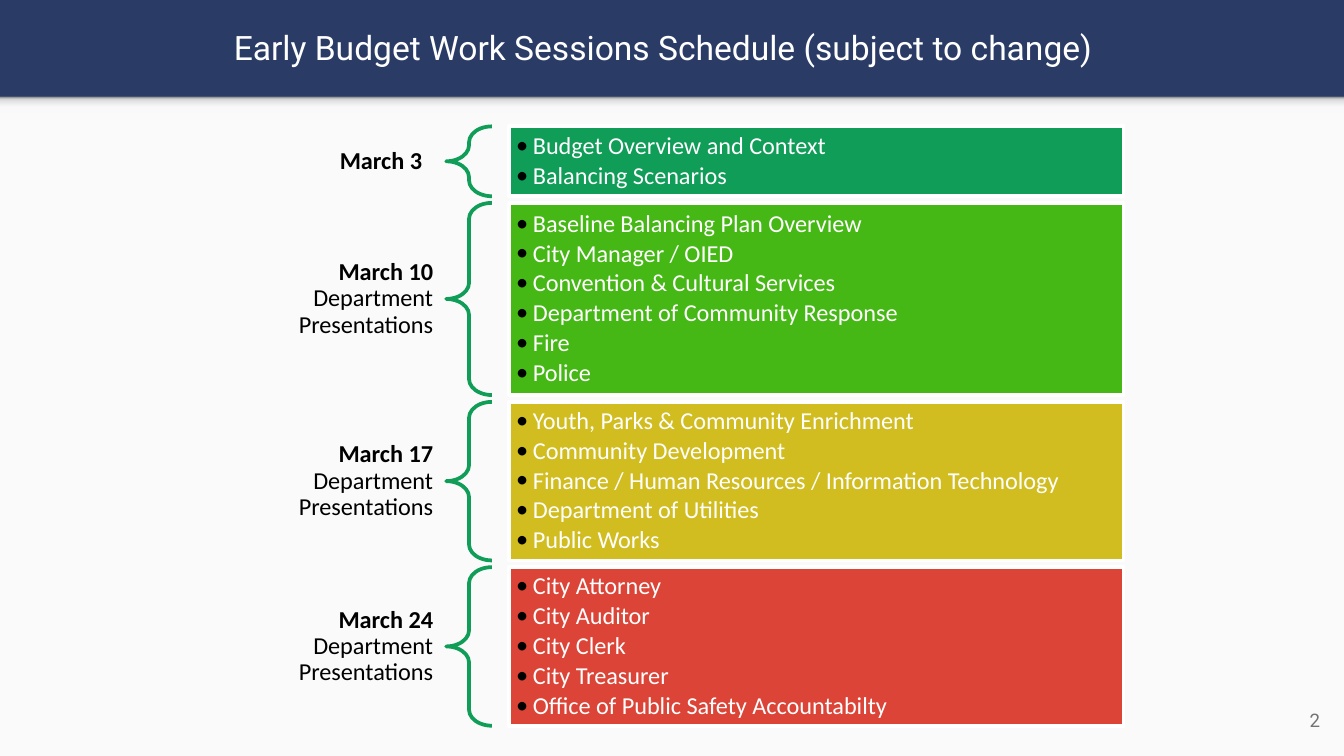
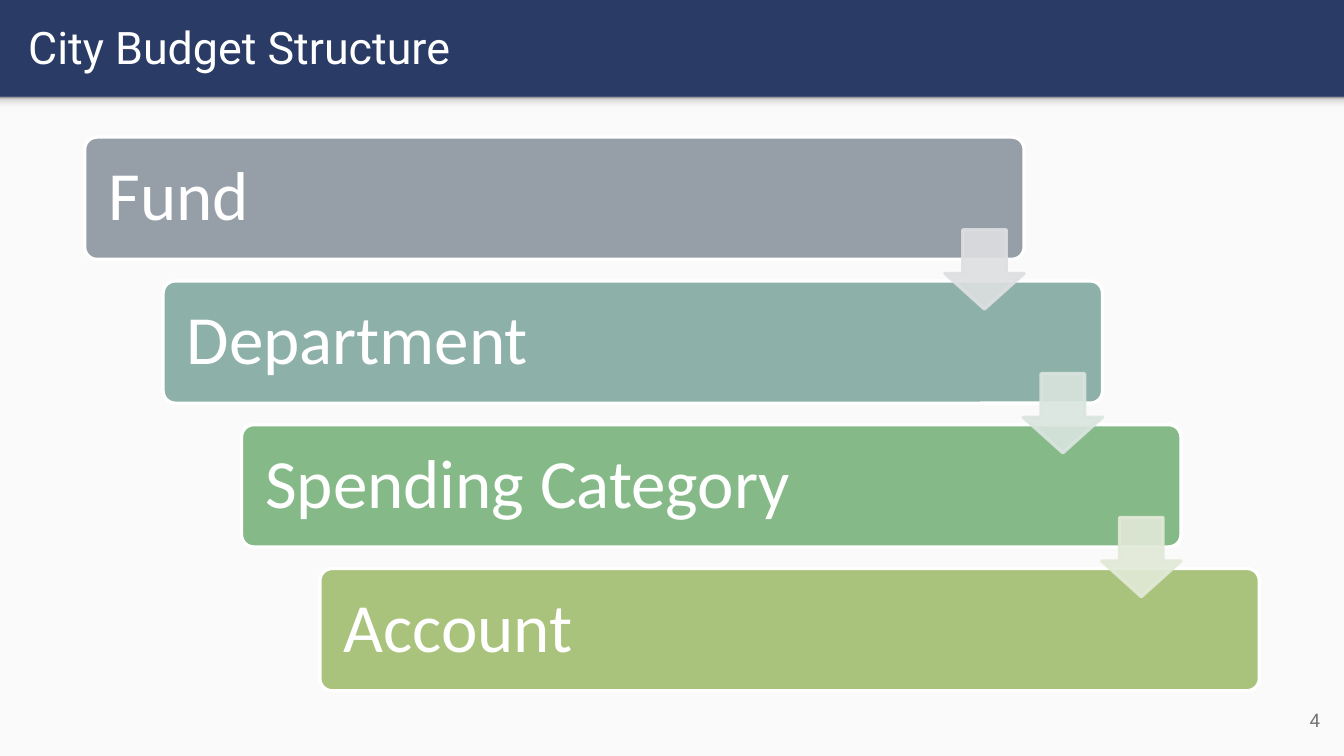
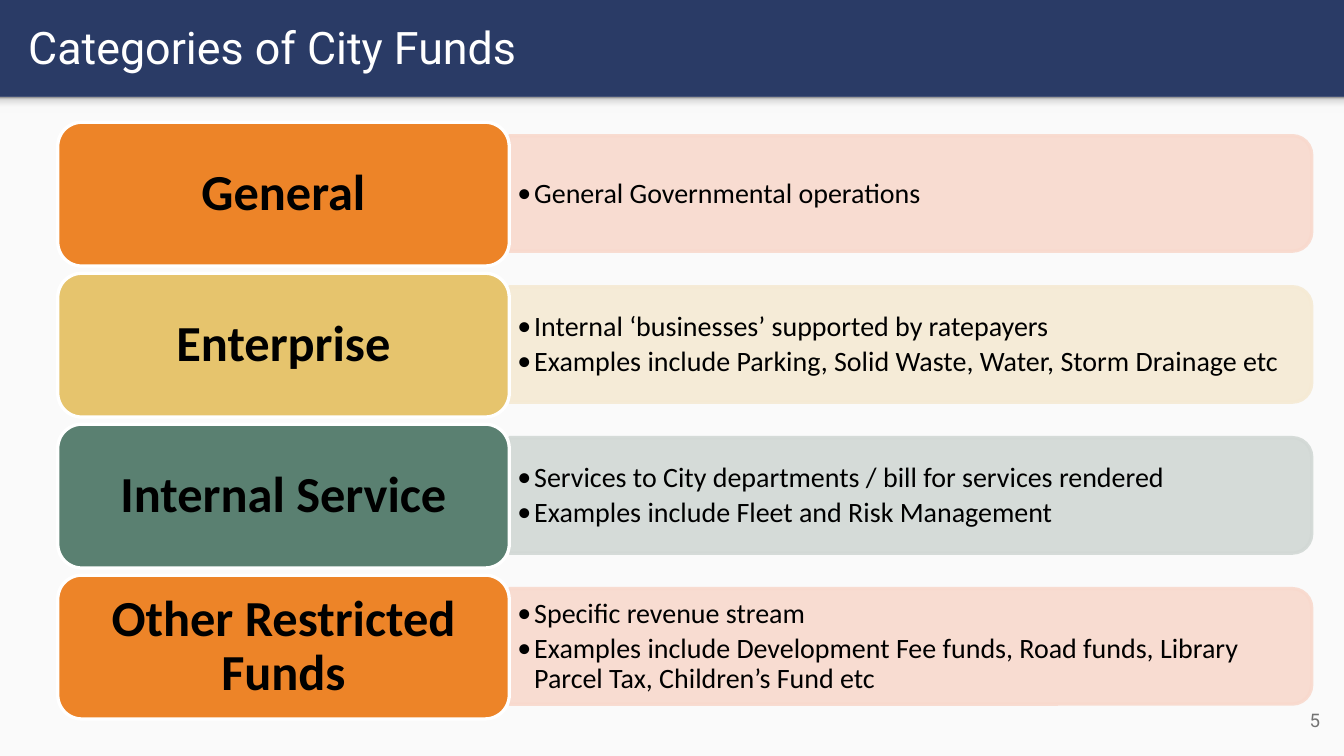
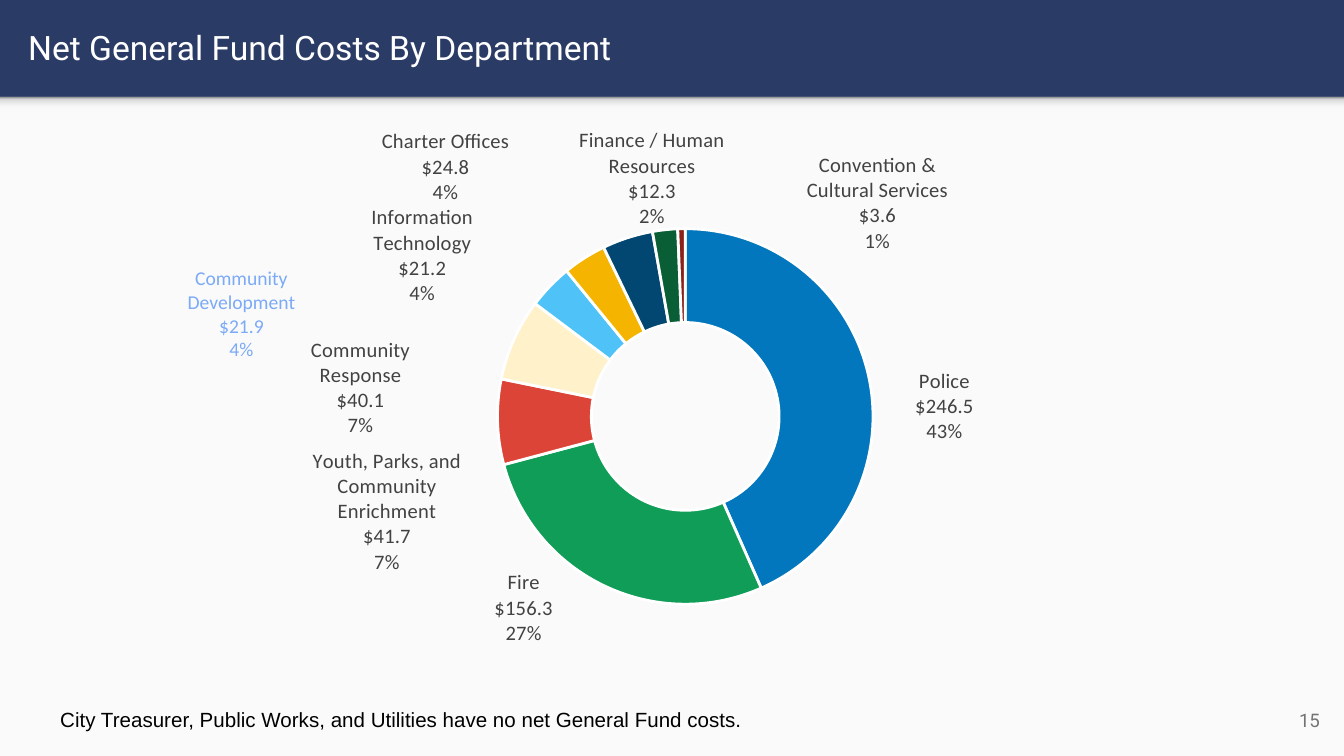
import math

import pptx
import pptx.chart.data
import pptx.dml.color
import pptx.enum.chart
import pptx.enum.shapes
import pptx.enum.text
import pptx.oxml
import pptx.oxml.ns
import pptx.util
from lxml import etree

Inches = pptx.util.Inches
Pt = pptx.util.Pt
SHAPES = pptx.enum.shapes.MSO_SHAPE
ALIGN = pptx.enum.text.PP_ALIGN
ANCHOR = pptx.enum.text.MSO_ANCHOR
qn = pptx.oxml.ns.qn

NAVY, PAPER, WHITE, BLACK = "2A3B66", "FAFAFA", "FFFFFF", "000000"
GREEN, RED, GREY, LABEL_GREY = "0F9D58", "DB4437", "737373", "424242"
HEADING_FONT, BODY_FONT, NOTE_FONT = "Roboto", "Calibri", "Arial"
SLIDE_WIDTH, BAND_HEIGHT = 10, 0.72
SLIDE_HEIGHT = SLIDE_WIDTH * 9 / 16
SHADE_STOPS = [(0, "F9F9F9"), (36, "F9F9F9"), (80, "DEDEDE"), (100, "999999")]
BULLET_INDENT = Inches(1 / 8)

SESSIONS = [
    ("March 3", "", 0.52, GREEN, ["Budget Overview and Context", "Balancing Scenarios"]),
    ("March 10 ", "Department Presentations", 1.43, "46B816",
     ["Baseline Balancing Plan Overview", "City Manager / OIED",
      "Convention & Cultural Services", "Department of Community Response",
      "Fire", "Police"]),
    ("March 17 ", "Department Presentations", 1.18, "D1BD1F",
     ["Youth, Parks & Community Enrichment", "Community Development",
      "Finance / Human Resources / Information Technology",
      "Department of Utilities", "Public Works"]),
    ("March 24 ", "Department Presentations", 1.18, RED,
     ["City Attorney", "City Auditor", "City Clerk", "City Treasurer",
      "Office of Public Safety Accountabilty"]),
]

# Level, box colour, colour of the arrow to the next level
BUDGET_LEVELS = [
    ("Fund", "969FA7", "DDDFE1"),
    ("Department", "8DB0A8", "DAE5DF"),
    ("Spending Category", "85BA88", "E2E9D7"),
    ("Account", "A9C37C", None),
]

FUNDS = [
    ("General", "ED8428", "F8D9CD", ["General Governmental operations"]),
    ("Enterprise", "E6C46D", "F5EAD4",
     ["Internal ‘businesses’ supported by ratepayers",
      "Examples include Parking, Solid Waste, Water, Storm Drainage etc"]),
    ("Internal Service", "5A8071", "D2D8D5",
     ["Services to City departments / bill for services rendered",
      "Examples include Fleet and Risk Management"]),
    ("Other Restricted Funds", "ED8428", "F8D9CD",
     ["Specific revenue stream",
      "Examples include Development Fee funds, Road funds, Library "
      "Parcel Tax, Children’s Fund etc"]),
]

# Department, cost, slice colour, centre of the label on the slide
COSTS = [
    ("Police", 246.5, "0277BD", (7.02, 3.02)),
    ("Fire", 156.3, GREEN, (3.9, 4.51)),
    ("Youth, Parks, and Community Enrichment", 41.7, RED, (2.89, 3.8)),
    ("Community Response", 40.1, "FFF1CA", (2.69, 2.88)),
    ("Community Development", 21.9, "4FC3F7", (1.8, 2.34)),
    ("Information Technology", 21.2, "F4B400", (3.15, 1.9)),
    ("Charter Offices", 24.8, "014771", (3.32, 1.24)),
    ("Finance / Human Resources", 12.3, "095E35", (4.85, 1.33)),
    ("Convention & Cultural Services", 3.6, "8B2219", (6.53, 1.51)),
]
CHART_BOX = (0.15, 0.88, 9.61, 4.11)
RING_CENTRE, RING_MIDDLE_RADIUS = (5.1, 3.09), 1.04


def rgb(colour):
    return pptx.dml.color.RGBColor.from_string(colour)


def format_font(font, size, colour, name=BODY_FONT, bold=False):
    font.size, font.name, font.bold = Pt(size), name, bold
    font.color.rgb = rgb(colour)


def format_frame(frame, inset=(0.1, 0.1), anchor=ANCHOR.MIDDLE):
    """Set wrapping, anchor and the (horizontal, vertical) insets."""
    frame.word_wrap = True
    frame.auto_size = pptx.enum.text.MSO_AUTO_SIZE.NONE
    frame.vertical_anchor = anchor
    frame.margin_left = frame.margin_right = Inches(inset[0])
    frame.margin_top = frame.margin_bottom = Inches(inset[1])


def write_line(frame, text, size, colour, name=BODY_FONT, bold=False,
               align=ALIGN.LEFT, spacing=None):
    frame.text = text
    paragraph = frame.paragraphs[0]
    paragraph.alignment, paragraph.line_spacing = align, spacing
    format_font(paragraph.runs[0].font, size, colour, name, bold)
    return paragraph


def write_bullets(frame, items, size, colour):
    frame.text = "\n".join(items)
    for paragraph in frame.paragraphs:
        properties = paragraph._p.get_or_add_pPr()
        properties.set("marL", str(BULLET_INDENT))
        properties.set("indent", str(-BULLET_INDENT))
        bullet_colour = etree.SubElement(properties, qn("a:buClr"))
        etree.SubElement(bullet_colour, qn("a:srgbClr"), val=BLACK)
        etree.SubElement(properties, qn("a:buFont"), typeface=BODY_FONT)
        etree.SubElement(properties, qn("a:buChar"), char="•")
        paragraph.alignment = ALIGN.LEFT
        paragraph.line_spacing = 0.9
        paragraph.space_after = Pt(0.15 * size)
        format_font(paragraph.runs[0].font, size, colour)


def add_text_box(slide, box, inset=(0.1, 0.1), anchor=ANCHOR.MIDDLE):
    frame = slide.shapes.add_textbox(*map(Inches, box)).text_frame
    format_frame(frame, inset, anchor)
    return frame


def add_shape(slide, kind, box, fill=None, line=None, width=1.75, opacity=None,
              adjustments=()):
    shape = slide.shapes.add_shape(kind, *map(Inches, box))
    shape.shadow.inherit = False
    if fill:
        shape.fill.solid()
        shape.fill.fore_color.rgb = rgb(fill)
    else:
        shape.fill.background()
    if line:
        shape.line.color.rgb = rgb(line)
        shape.line.width = Pt(width)
    else:
        shape.line.fill.background()
    for index, value in enumerate(adjustments):
        shape.adjustments[index] = value
    if opacity:
        for colour in shape._element.spPr.iter(qn("a:srgbClr")):
            etree.SubElement(colour, qn("a:alpha"), val=str(opacity * 1000))
    return shape


def shade_upwards(shape, stops):
    shape.fill.gradient()
    shape.fill.gradient_angle = 90
    stop_list = shape._element.spPr.find(".//" + qn("a:gsLst"))
    for stop in list(stop_list):
        stop_list.remove(stop)
    for position, colour in stops:
        stop = etree.SubElement(stop_list, qn("a:gs"), pos=str(position * 1000))
        etree.SubElement(stop, qn("a:srgbClr"), val=colour)


def add_titled_slide(presentation, title, number, size=24, align=ALIGN.LEFT):
    slide = presentation.slides.add_slide(presentation.slide_layouts[5])
    add_shape(slide, SHAPES.RECTANGLE,
              (0, BAND_HEIGHT, SLIDE_WIDTH, SLIDE_HEIGHT - BAND_HEIGHT), PAPER)
    shade = add_shape(slide, SHAPES.RECTANGLE, (0, BAND_HEIGHT, SLIDE_WIDTH, 0.12))
    shade_upwards(shade, SHADE_STOPS)
    heading = slide.shapes.title
    heading.left, heading.top = Inches(0.11), Inches(0.02)
    heading.width, heading.height = Inches(9.65), Inches(0.66)
    format_frame(heading.text_frame)
    write_line(heading.text_frame, title, size, WHITE, HEADING_FONT, align=align)
    write_line(add_text_box(slide, (9.32, 5.14, 0.6, 0.43)), str(number), 10, GREY,
               HEADING_FONT, align=ALIGN.RIGHT)
    return slide


def add_schedule(slide):
    top = 0.94
    for date, subject, height, colour, topics in SESSIONS:
        frame = add_text_box(slide, (1.64, top, 1.68, height), (0.1, 0.04))
        paragraph = write_line(frame, date, 13, BLACK, bold=True,
                               align=ALIGN.RIGHT, spacing=0.9)
        if subject:
            run = paragraph.add_run()
            run.text = subject
            format_font(run.font, 13, BLACK)
        else:
            frame.margin_right = Inches(0.18)
        add_shape(slide, SHAPES.LEFT_BRACE, (3.32, top, 0.34, height),
                  line=GREEN, width=2, adjustments=(0.35, 0.5))
        block = add_shape(slide, SHAPES.RECTANGLE, (3.79, top, 4.57, height),
                          colour, WHITE, 2)
        format_frame(block.text_frame, (0.05, 0.05))
        write_bullets(block.text_frame, topics, 13, WHITE)
        top += height + 0.05


def add_staircase(slide):
    corners = [(0.63 + 1.75 / 3 * step, 1.02 + 1.07 * step)
               for step in range(len(BUDGET_LEVELS))]
    for (left, top), (level, colour, _) in zip(corners, BUDGET_LEVELS):
        box = add_shape(slide, SHAPES.ROUNDED_RECTANGLE, (left, top, 6.99, 0.91),
                        colour, WHITE, adjustments=(0.1,))
        format_frame(box.text_frame, (0.15, 0.15))
        write_line(box.text_frame, level, 37, WHITE, spacing=0.9)
    for (left, top), (_, _, colour) in zip(corners, BUDGET_LEVELS):
        if colour:
            add_shape(slide, SHAPES.DOWN_ARROW, (left + 6.4, top + 0.69, 0.59, 0.59),
                      colour, colour, opacity=90, adjustments=(0.55, 0.45))


def add_fund_rows(slide):
    panel_left, panel_width, panel_height = 3.79, 5.97, 0.86
    for row, (fund, colour, tint, notes) in enumerate(FUNDS):
        top = 0.91 + 3.37 / 3 * row
        middle = top + 0.53
        # A quarter turn puts the two rounded corners on the right
        panel = add_shape(
            slide, SHAPES.ROUND_2_SAME_RECTANGLE,
            (panel_left + (panel_width - panel_height) / 2, middle - panel_width / 2,
             panel_height, panel_width), tint, tint, opacity=90)
        panel.rotation = 90
        frame = add_text_box(slide, (panel_left, top + 0.15, 5.93, 0.77), (0.06, 0.03))
        write_bullets(frame, notes, 15, BLACK)
        card = add_shape(slide, SHAPES.ROUNDED_RECTANGLE, (0.43, top, 3.36, 1.07),
                         colour, WHITE)
        format_frame(card.text_frame, (0.11, 0.06))
        write_line(card.text_frame, fund, 27, BLACK, bold=True, align=ALIGN.CENTER,
                   spacing=0.9)


def manual_layout(**values):
    """Return a c:layout element holding the given settings in order."""
    layout = pptx.oxml.parse_xml(
        "<c:layout %s><c:manualLayout/></c:layout>" % pptx.oxml.ns.nsdecls("c"))
    for name, value in values.items():
        etree.SubElement(layout[0], qn("c:" + name), val=str(value))
    return layout


def place_label(label, offset):
    """Show name, value and percentage, moved from the middle of the slice."""
    for name in ("c:showCatName", "c:showPercent"):
        label.find(qn(name)).set("val", "1")
    label.find(qn("c:idx")).addnext(manual_layout(x=offset[0], y=offset[1]))
    separator = etree.Element(qn("c:separator"))
    separator.text = "\n"
    label.find(qn("c:showBubbleSize")).addnext(separator)


def hide_leader_lines(labels):
    for leader in labels.findall(qn("c:showLeaderLines")):
        labels.remove(leader)
    etree.SubElement(labels, qn("c:showLeaderLines"), val="0")


def add_cost_chart(slide):
    data = pptx.chart.data.CategoryChartData(number_format='"$"#,##0.0')
    data.categories = [department for department, *_ in COSTS]
    data.add_series("Series 1", [cost for _, cost, *_ in COSTS])
    chart = slide.shapes.add_chart(pptx.enum.chart.XL_CHART_TYPE.DOUGHNUT,
                                   *map(Inches, CHART_BOX), data).chart
    chart.has_legend = chart.has_title = False
    format_font(chart.font, 10, "4285F4")
    plot_area = chart._chartSpace.find(".//" + qn("c:plotArea"))
    for layout in plot_area.findall(qn("c:layout")):
        plot_area.remove(layout)
    plot_area.insert(0, manual_layout(layoutTarget="inner", xMode="edge", yMode="edge",
                                      x=0.35, y=0.2, w=0.33, h=0.68))
    chart.plots[0].vary_by_categories = True
    series = chart.plots[0].series[0]
    series_labels = series.data_labels
    series_labels.show_value = True
    series_labels.show_percentage = True
    series_labels.show_category_name = True
    format_font(series_labels.font, 11, LABEL_GREY)
    total = sum(cost for _, cost, *_ in COSTS)
    running = 0
    for index, (department, cost, colour, target) in enumerate(COSTS):
        point = series.points[index]
        point.format.fill.solid()
        point.format.fill.fore_color.rgb = rgb(colour)
        point.format.line.color.rgb = rgb(WHITE)
        point.format.line.width = Pt(1.5)
        special = department == "Community Development"
        format_font(point.data_label.font, 10.5 if special else 11,
                    "7BAAF7" if special else LABEL_GREY)
        angle = 2 * math.pi * (running + cost / 2) / total
        running += cost
        middle = (RING_CENTRE[0] + RING_MIDDLE_RADIUS * math.sin(angle),
                  RING_CENTRE[1] - RING_MIDDLE_RADIUS * math.cos(angle))
        offset = [round((end - start) / extent, 3)
                  for start, end, extent in zip(middle, target, CHART_BOX[2:])]
        label = series._element.findall(".//" + qn("c:dLbl"))[index]
        place_label(label, offset)
    hide_leader_lines(series._element.find(qn("c:dLbls")))


def main():
    presentation = pptx.Presentation()
    presentation.slide_width = Inches(SLIDE_WIDTH)
    presentation.slide_height = Inches(SLIDE_HEIGHT)
    background = presentation.slide_master.background.fill
    background.solid()
    background.fore_color.rgb = rgb(NAVY)

    add_schedule(add_titled_slide(
        presentation, "Early Budget Work Sessions Schedule (subject to change)", 2,
        18, ALIGN.CENTER))
    add_staircase(add_titled_slide(presentation, "City Budget Structure", 4))
    add_fund_rows(add_titled_slide(presentation, "Categories of City Funds", 5))

    slide = add_titled_slide(presentation, "Net General Fund Costs By Department", 15, 18)
    add_cost_chart(slide)
    note = add_text_box(slide, (0.35, 5.21, 9.17, 0.29), (0.1, 0.05), ANCHOR.TOP)
    write_line(note, "City Treasurer, Public Works, and Utilities have no net "
               "General Fund costs.", 11, BLACK, NOTE_FONT)

    presentation.save("out.pptx")


if __name__ == "__main__":
    main()
